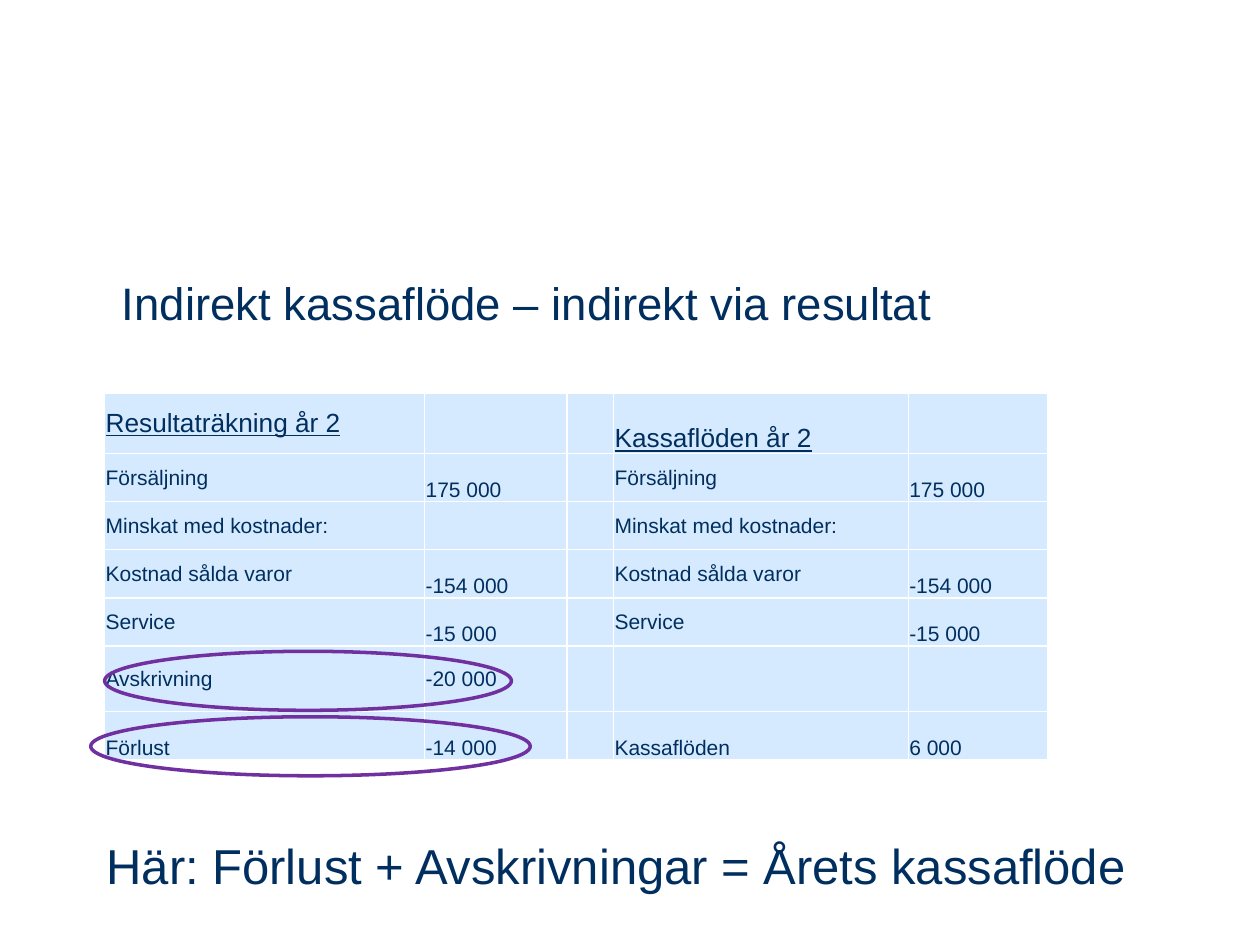
from lxml import etree
from pptx import Presentation
from pptx import util as u
from pptx.dml.color import RGBColor
from pptx.enum import shapes, text
from pptx.oxml.ns import qn

COLORS = {"text": "002F5F", "cell": "D6EAFF", "border": "FFFFFF", "ring": "7030A0"}
FONT = "Arial"
ANCHORS = {"m": text.MSO_ANCHOR.MIDDLE, "b": text.MSO_ANCHOR.BOTTOM}

COLUMN_WIDTHS = [6.45, 2.87, 0.94, 5.94, 2.82]
# Row height, vertical anchor of each cell, cell texts
ROWS = [
    (1.22, "mbbbb", ["Resultaträkning år 2", "", "", "Kassaflöden år 2", ""]),
    (0.97, "mbbmb", ["Försäljning", "175 000", "", "Försäljning", "175 000"]),
    (0.97, "mbbmb", ["Minskat med kostnader:", "", "", "Minskat med kostnader:", ""]),
    (0.97, "mbbmb", ["Kostnad sålda varor", "-154 000", "", "Kostnad sålda varor", "-154 000"]),
    (0.97, "mbbmb", ["Service", "-15 000", "", "Service", "-15 000"]),
    (1.32, "mmmmm", ["Avskrivning", "-20 000", "", "", ""]),
    (0.97, "bbbbb", ["Förlust", "-14 000", "", "Kassaflöden", "6 000"]),
]


def color(name):
    return RGBColor.from_string(COLORS[name])


def add_run(p, content, size, underline=False):
    r = p.add_run()
    r.text = content
    r.font.name = FONT
    r.font.size = u.Pt(size)
    r.font.underline = underline
    r.font.color.rgb = color("text")


def add_text(s, box, content, size, wrap=True):
    tf = s.shapes.add_textbox(*map(u.Cm, box)).text_frame
    tf.word_wrap = wrap
    add_run(tf.paragraphs[0], content, size)
    return tf


def set_borders(cell):
    """Draw a thin line on all four sides; borders must precede the fill."""
    tc_pr = cell._tc.get_or_add_tcPr()
    for i, side in enumerate(("lnL", "lnR", "lnT", "lnB")):
        ln = etree.Element(qn(f"a:{side}"), w=str(u.Pt(1)))
        fill = etree.SubElement(ln, qn("a:solidFill"))
        etree.SubElement(fill, qn("a:srgbClr"), val=COLORS["border"])
        tc_pr.insert(i, ln)


def fill_cell(cell, content, anchor, header):
    cell.margin_left = cell.margin_right = cell.margin_top = u.Cm(0.02)
    cell.margin_bottom = 0
    cell.vertical_anchor = ANCHORS[anchor]
    cell.fill.solid()
    cell.fill.fore_color.rgb = color("cell")
    set_borders(cell)
    if content:
        add_run(cell.text_frame.paragraphs[0], content, 15 if header else 12, header)


def add_statement_table(s, left, top):
    width = sum(COLUMN_WIDTHS)
    height = sum(row[0] for row in ROWS)
    frame = s.shapes.add_table(len(ROWS), len(COLUMN_WIDTHS),
                               *map(u.Cm, (left, top, width, height)))
    table = frame.table
    table.first_row = table.horz_banding = False
    for column, w in zip(table.columns, COLUMN_WIDTHS):
        column.width = u.Cm(w)
    for i, (h, anchors, contents) in enumerate(ROWS):
        table.rows[i].height = u.Cm(h)
        for cell, content, anchor in zip(table.rows[i].cells, contents, anchors):
            fill_cell(cell, content, anchor, header=i == 0)


def add_ring(s, *box):
    sp = s.shapes.add_shape(shapes.MSO_SHAPE.OVAL, *map(u.Cm, box))
    sp.shadow.inherit = False
    sp.fill.background()
    sp.line.color.rgb = color("ring")
    sp.line.width = u.Pt(2)


def main():
    prs = Presentation()
    prs.slide_width, prs.slide_height = u.Cm(25.4), u.Cm(19.05)
    s = prs.slides.add_slide(prs.slide_layouts[6])
    add_text(s, (2.21, 5.41, 19.02, 2.21), "Indirekt kassaflöde – indirekt via resultat", 26)
    add_statement_table(s, 2.11, 7.92)
    tf = add_text(s, (1.9, 16.71, 21.31, 1.45),
                  "Här: Förlust + Avskrivningar = Årets kassaflöde", 28, wrap=False)
    tf.auto_size = text.MSO_AUTO_SIZE.SHAPE_TO_FIT_TEXT
    add_ring(s, 2.11, 13.13, 8.2, 1.19)
    add_ring(s, 1.83, 14.45, 8.86, 1.19)
    prs.save("out.pptx")


if __name__ == "__main__":
    main()
